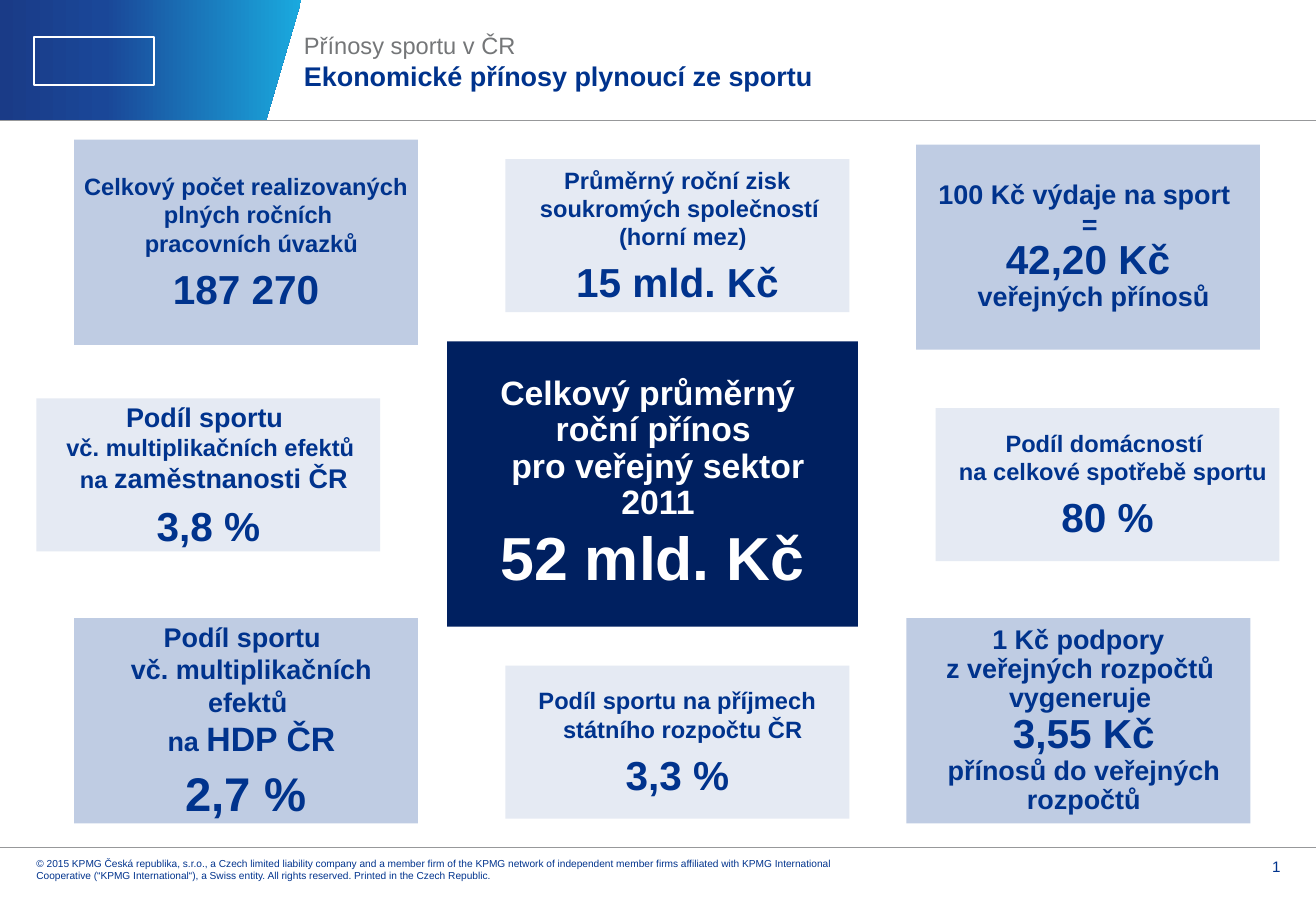
from lxml.etree import SubElement
from copy import deepcopy
from pptx import Presentation
from pptx.dml.color import RGBColor
from pptx.enum.shapes import MSO_CONNECTOR, MSO_SHAPE
from pptx.enum.text import MSO_ANCHOR, PP_ALIGN
from pptx.oxml.ns import qn
from pptx.util import Inches, Pt

NAVY = RGBColor(0x00, 0x20, 0x60)
BLUE = RGBColor(0x00, 0x33, 0x8D)
MID = RGBColor(0xBF, 0xCC, 0xE3)
PALE = RGBColor(0xE5, 0xEA, 0xF3)
GREY = RGBColor(0x74, 0x76, 0x78)
RULE = RGBColor(0x97, 0x98, 0x9A)
WHITE = RGBColor(0xFF, 0xFF, 0xFF)
BAND = [(0, RGBColor(0x1A, 0x3B, 0x87)),
        (0.35, RGBColor(0x1A, 0x47, 0x98)),
        (1, RGBColor(0x1A, 0xA9, 0xDE))]

# The slide is a grid of 100 columns and 100 rows
WIDE, HIGH = Inches(10.83), Inches(7.5)
COL, ROW = WIDE / 100, HIGH / 100
HANG = Inches(0.09)

# Card sizes in columns and rows
TALL = (26.13, 22.53)
LOW = (26.13, 16.8)
CORE = (31.21, 31.33)

# Place, size, fill, line spacing, paragraphs of (text, points)
CARDS = [
    ((5.63, 67.87), TALL, MID, 1,
     [[("Podíl sportu \nvč. multiplikačních efektů \nna ", 16),
       ("HDP ČR", 20)], [("2,7 %", 28)]]),
    ((38.41, 17.47), LOW, PALE, 1,
     [[("Průměrný roční zisk soukromých společností \n(horní mez)", 14)],
      [("15 mld. Kč", 24)]]),
    ((5.63, 15.33), TALL, MID, 1,
     [[("Celkový počet realizovaných plných ročních \n"
        "pracovních úvazků", 14)], [("187 270", 24)]]),
    ((71.1, 44.8), LOW, PALE, 1,
     [[("Podíl domácností \nna celkové spotřebě sportu", 14)],
      [("80 %", 24)]]),
    ((2.77, 43.73), LOW, PALE, 1,
     [[("Podíl sportu \n", 16), ("vč. multiplikačních efektů \nna ", 14),
       ("zaměstnanosti ČR", 16)], [("3,8 %", 24)]]),
    ((33.98, 37.47), CORE, NAVY, 0.9,
     [[("Celkový průměrný \nroční přínos \npro veřejný sektor\n2011", 20)],
      [("52 mld. Kč", 36)]]),
    ((69.62, 15.87), TALL, MID, 0.9,
     [[("100 Kč výdaje na sport \n= \n", 16), ("42,20 Kč \n", 24),
       ("veřejných přínosů", 16)]]),
    ((38.41, 73.07), LOW, PALE, 1,
     [[("Podíl sportu na příjmech státního rozpočtu ČR", 14)],
      [("3,3 %", 24)]]),
    ((68.88, 67.87), TALL, MID, 0.9,
     [[("1 Kč podpory\nz veřejných rozpočtů \nvygeneruje \n", 16),
       ("3,55 Kč\n", 24), ("přínosů do veřejných rozpočtů", 16)]]),
]
LEGAL = ("© 2015 KPMG Česká republika, s.r.o., a Czech limited liability "
         "company and a member firm of the KPMG network of independent "
         "member firms affiliated with KPMG International Cooperative "
         "(“KPMG International“), a Swiss entity. All rights reserved. "
         "Printed in the Czech Republic.")


def grid(x, y, w, h):
    return [round(v) for v in (x * COL, y * ROW, w * COL, h * ROW)]


def write(para, text, size=14, color=BLUE, bold=False):
    """Add text to a paragraph; each newline is a line break."""
    for i, line in enumerate(text.split("\n")):
        if i:
            para.add_line_break()
            mark = SubElement(para._p[-1], qn("a:rPr"))
            mark.set("sz", str(size * 100))
        if line:
            run = para.add_run()
            run.text = line
            font = run.font
            font.name, font.size, font.bold = "Arial", Pt(size), bold
            font.color.rgb = color


def inset(frame, left=0, top=0, right=0, base=0):
    frame.word_wrap = True
    frame.margin_left, frame.margin_top = Inches(left), Inches(top)
    frame.margin_right, frame.margin_bottom = Inches(right), Inches(base)


def label(slide, box, **gaps):
    frame = slide.shapes.add_textbox(*grid(*box)).text_frame
    inset(frame, **gaps)
    return frame


def rule(slide, x, y, w):
    left, top, width, _ = grid(x, y, w, 0)
    line = slide.shapes.add_connector(
        MSO_CONNECTOR.STRAIGHT, left, top, left + width, top)
    line.line.color.rgb, line.line.width = RULE, Pt(0.5)
    SubElement(line._element.spPr, qn("a:effectLst"))


def header(slide, box):
    x, y, w, h = box
    # Slanted band with a gradient
    left, top, wide, high = grid(x, y, w * 0.229, h)
    path = slide.shapes.build_freeform(left, top)
    foot = left + round(wide * 0.883)
    path.add_line_segments([(left, top + high), (foot, top + high),
                            (left + wide, top)])
    band = path.convert_to_shape()
    band.shadow.inherit = False
    band.line.fill.background()
    band.fill.gradient()
    band.fill.gradient_angle = 0
    stops = band._element.spPr.find(qn("a:gradFill")).find(qn("a:gsLst"))
    stops.insert(1, deepcopy(stops[0]))
    for stop, (place, color) in zip(band.fill.gradient_stops, BAND):
        stop.position, stop.color.rgb = place, color
    # Plain mark on the band
    mark = slide.shapes.add_shape(MSO_SHAPE.RECTANGLE, *grid(
        x + w * 0.026, y + h * 0.31, w * 0.091, h * 0.4))
    mark.shadow.inherit = False
    mark.fill.background()
    mark.line.color.rgb, mark.line.width = WHITE, Pt(1)
    # Title
    frame = label(slide, (x + w * 0.231, y + h * 0.13, w * 0.74, h * 0.636))
    frame.vertical_anchor = MSO_ANCHOR.BOTTOM
    para = frame.paragraphs[0]
    write(para, "Přínosy sportu v ČR\n", color=GREY)
    write(para, "Ekonomické přínosy plynoucí ze sportu", 16, bold=True)
    rule(slide, x, y + h, w)


def footer(slide, box):
    x, y, w, h = box
    rule(slide, x, y, w)
    legal = label(slide, (x + w * 0.0277, y, w * 0.618, h * 0.54), top=0.08)
    write(legal.paragraphs[0], LEGAL, 6)
    page = label(slide, (x + w * 0.922, y, w * 0.051, h * 0.6),
                 left=0.08, top=0.08)
    page.paragraphs[0].alignment = PP_ALIGN.RIGHT
    write(page.paragraphs[0], "1", 9)


def card(slide, box, fill, pitch, paras):
    shape = slide.shapes.add_shape(MSO_SHAPE.RECTANGLE, *grid(*box))
    shape.shadow.inherit = False
    shape.fill.solid()
    shape.fill.fore_color.rgb = fill
    shape.line.fill.background()
    frame = shape.text_frame
    inset(frame, 0.04, 0.04, 0.04, 0.04)
    frame.vertical_anchor = MSO_ANCHOR.MIDDLE
    color = WHITE if fill == NAVY else BLUE
    for i, runs in enumerate(paras):
        para = frame.add_paragraph() if i else frame.paragraphs[0]
        para.alignment = PP_ALIGN.CENTER
        para.line_spacing = pitch - 0.1 * i if pitch < 1 else pitch
        if i:
            share = 0.2 if fill == NAVY else 0.15
            para.space_before = Pt(round(runs[0][1] * share))
        props = para._p.get_or_add_pPr()
        props.set("marL", str(HANG))
        props.set("indent", str(-HANG))
        for text, size in runs:
            write(para, text, size, color, bold=True)


def main():
    deck = Presentation()
    deck.slide_width, deck.slide_height = WIDE, HIGH
    slide = deck.slides.add_slide(deck.slide_layouts[6])
    header(slide, (0, 0, 100, 13.2))
    footer(slide, (0, 93.07, 100, 6.93))
    for place, size, fill, pitch, paras in CARDS:
        card(slide, place + size, fill, pitch, paras)
    deck.save("out.pptx")


if __name__ == "__main__":
    main()
